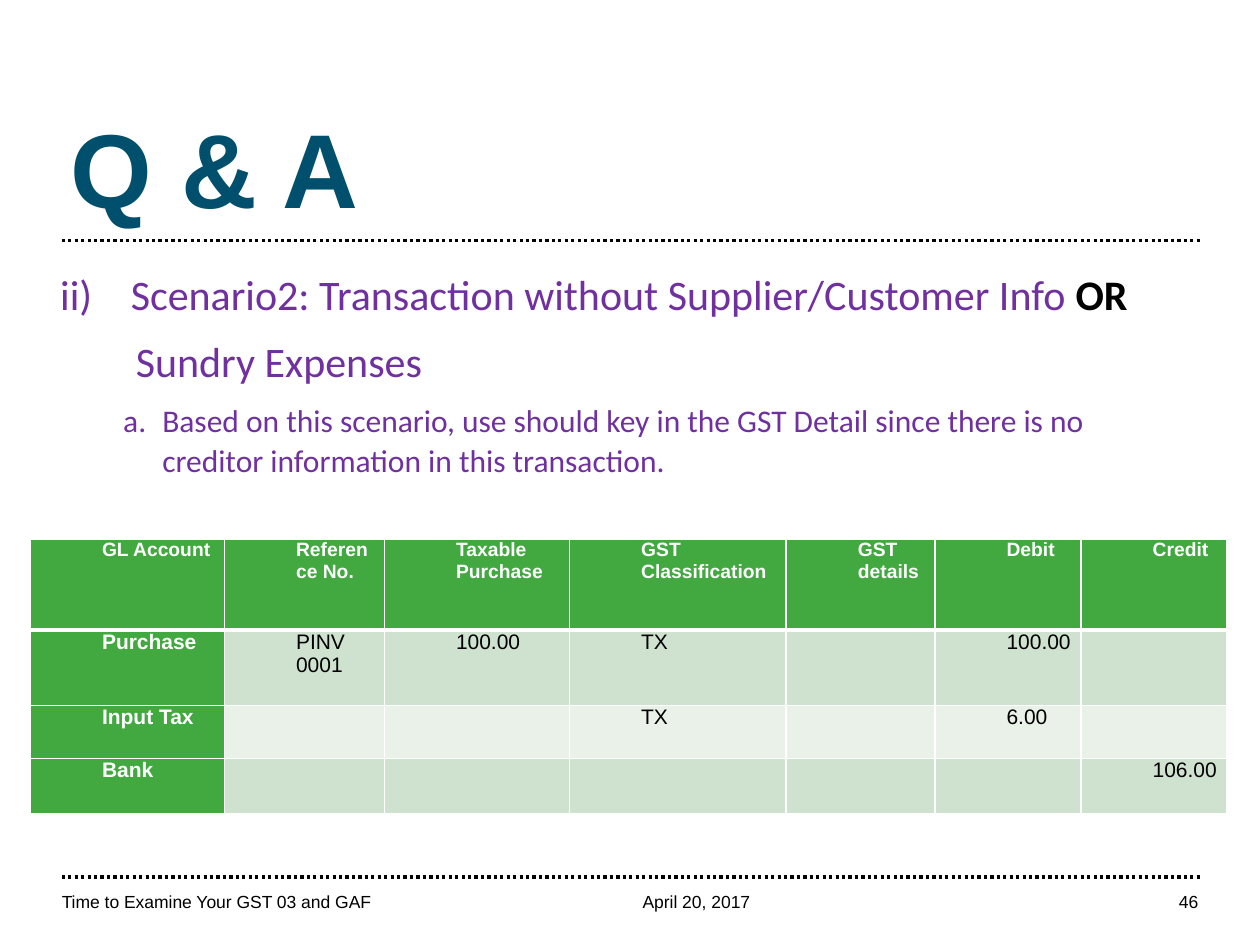
from lxml.etree import SubElement
from pptx import Presentation
from pptx.dml.color import RGBColor
from pptx.enum.dml import MSO_LINE
from pptx.enum.shapes import MSO_CONNECTOR
from pptx.enum.text import MSO_ANCHOR, PP_ALIGN
from pptx.oxml.ns import qn
from pptx.util import Inches, Pt

BLACK, WHITE, TEAL, PURPLE = "000000", "FFFFFF", "00506D", "7030A0"
GREEN, BANDS = "41A940", ("CFE2CF", "E9F1E8")

TITLE = "Q & A"
BODY_FONT = dict(name="Calibri", size=Pt(24), color=PURPLE)
# level, left margin, hanging indent, numbering, start number, runs
BODY = [
    (0, 0.56, -0.56, "romanLcParenR", 2, [
        ("Scenario2: Transaction without Supplier/Customer Info ", BODY_FONT),
        ("OR", BODY_FONT | dict(color=BLACK, bold=True))]),
    (0, 0.6, 0, None, None, [("Sundry Expenses", BODY_FONT)]),
    (1, 0.81, -0.31, "alphaLcPeriod", 1, [
        ("Based on this scenario, use should key in the GST Detail since "
         "there is no creditor information in this transaction.",
         BODY_FONT | dict(size=Pt(18)))]),
]
ENTRIES = [
    ["GL Account", "Reference No.", "Taxable Purchase", "GST Classification",
     "GST details", "Debit", "Credit"],
    ["Purchase", "PINV 0001", "100.00", "TX", "", "100.00", ""],
    ["Input Tax", "", "", "TX", "", "6.00", ""],
    ["Bank", "", "", "", "", "", "106.00"],
]
COL_WIDTHS = [1.54, 1.27, 1.47, 1.72, 1.18, 1.16, 1.16]
ROW_HEIGHTS = [0.72, 0.6, 0.42, 0.44]
# left, width, alignment, text
FOOTERS = [
    (0.49, 4.41, PP_ALIGN.LEFT, "Time to Examine Your GST 03 and GAF"),
    (5.1, 2.34, PP_ALIGN.LEFT, "April 20, 2017"),
    (7.87, 1.64, PP_ALIGN.RIGHT, "46"),
]
RULES = [1.91, 6.96]


def rgb(color):
    return RGBColor.from_string(color)


def add_run(p, text, name="Arial", size=Pt(10), color=BLACK, bold=False):
    r = p.add_run()
    r.text = text
    for key, value in dict(name=name, size=size, bold=bold).items():
        setattr(r.font, key, value)
    r.font.color.rgb = rgb(color)


def set_indent(p, left, first=0):
    pPr = p._p.get_or_add_pPr()
    pPr.set("marL", str(Inches(left)))
    pPr.set("indent", str(Inches(first)))
    return pPr


def set_borders(cell, top, bottom):
    """Draw white cell borders; top and bottom widths are in points."""
    tcPr = cell._tc.get_or_add_tcPr()
    for tag, width in (("lnL", 1), ("lnR", 1), ("lnT", top), ("lnB", bottom)):
        ln = SubElement(tcPr, qn(f"a:{tag}"), w=str(Pt(width)))
        fill = SubElement(ln, qn("a:solidFill"))
        SubElement(fill, qn("a:srgbClr"), val=WHITE)


def add_rule(s, y):
    line = s.shapes.add_connector(MSO_CONNECTOR.STRAIGHT, Inches(0.49),
                                  Inches(y), Inches(9.53), Inches(y))
    line.line.color.rgb = rgb(BLACK)
    line.line.width = Pt(1.85)
    line.line.dash_style = MSO_LINE.ROUND_DOT
    SubElement(line._element.spPr, qn("a:effectLst"))


def add_footer(s, left, width, align, text):
    tf = s.shapes.add_textbox(Inches(left), Inches(6.97), Inches(width),
                              Inches(0.27)).text_frame
    tf.margin_left = tf.margin_right = tf.margin_top = tf.margin_bottom = 0
    tf.vertical_anchor = MSO_ANCHOR.BOTTOM
    tf.word_wrap = True
    tf.paragraphs[0].alignment = align
    add_run(tf.paragraphs[0], text)


def set_title(s):
    sp = s.shapes.title
    sp.left, sp.top, sp.width, sp.height = map(Inches, (0.46, 0.77, 2.74, 1.11))
    tf = sp.text_frame
    tf.vertical_anchor = MSO_ANCHOR.TOP
    tf.paragraphs[0].alignment = PP_ALIGN.LEFT
    add_run(tf.paragraphs[0], TITLE, size=Pt(60), color=TEAL, bold=True)


def add_body(s):
    tf = s.shapes.add_textbox(*map(Inches, (0.38, 2.06, 9.06, 1.81))).text_frame
    tf.word_wrap = True
    for i, (level, left, first, numbering, start, runs) in enumerate(BODY):
        p = tf.add_paragraph() if i else tf.paragraphs[0]
        pPr = set_indent(p, left, first)
        if numbering:
            SubElement(pPr, qn("a:buFont"), typeface="+mj-lt")
            SubElement(pPr, qn("a:buAutoNum"), type=numbering, startAt=str(start))
        p.level, p.line_spacing, p.space_after = level, 1.05, Pt(8)
        for text, style in runs:
            add_run(p, text, **style)


def add_entries(s):
    table = s.shapes.add_table(len(ENTRIES), len(COL_WIDTHS), Inches(0.24),
                               Inches(4.28), Inches(sum(COL_WIDTHS)),
                               Inches(sum(ROW_HEIGHTS))).table
    table.first_col = True
    for col, width in zip(table.columns, COL_WIDTHS):
        col.width = Inches(width)
    for i, (row, height) in enumerate(zip(table.rows, ROW_HEIGHTS)):
        row.height = Inches(height)
        for j, (cell, text) in enumerate(zip(row.cells, ENTRIES[i])):
            heading = i == 0 or j == 0
            set_borders(cell, 3 if i == 1 else 1, 3 if i == 0 else 1)
            cell.fill.solid()
            cell.fill.fore_color.rgb = rgb(GREEN if heading else BANDS[(i - 1) % 2])
            cell.margin_left = cell.margin_right = Inches(0.07)
            cell.margin_top = cell.margin_bottom = 0
            p = cell.text_frame.paragraphs[0]
            set_indent(p, 0.5)
            if text:
                add_run(p, text, size=Pt(12 if i else 11), bold=heading,
                        color=WHITE if heading else BLACK)


def main():
    prs = Presentation()
    prs.slide_width, prs.slide_height = Inches(10), Inches(7.5)
    s = prs.slides.add_slide(prs.slide_layouts[5])
    for y in RULES:
        add_rule(s, y)
    for footer in FOOTERS:
        add_footer(s, *footer)
    set_title(s)
    add_body(s)
    add_entries(s)
    prs.save("out.pptx")


if __name__ == "__main__":
    main()
